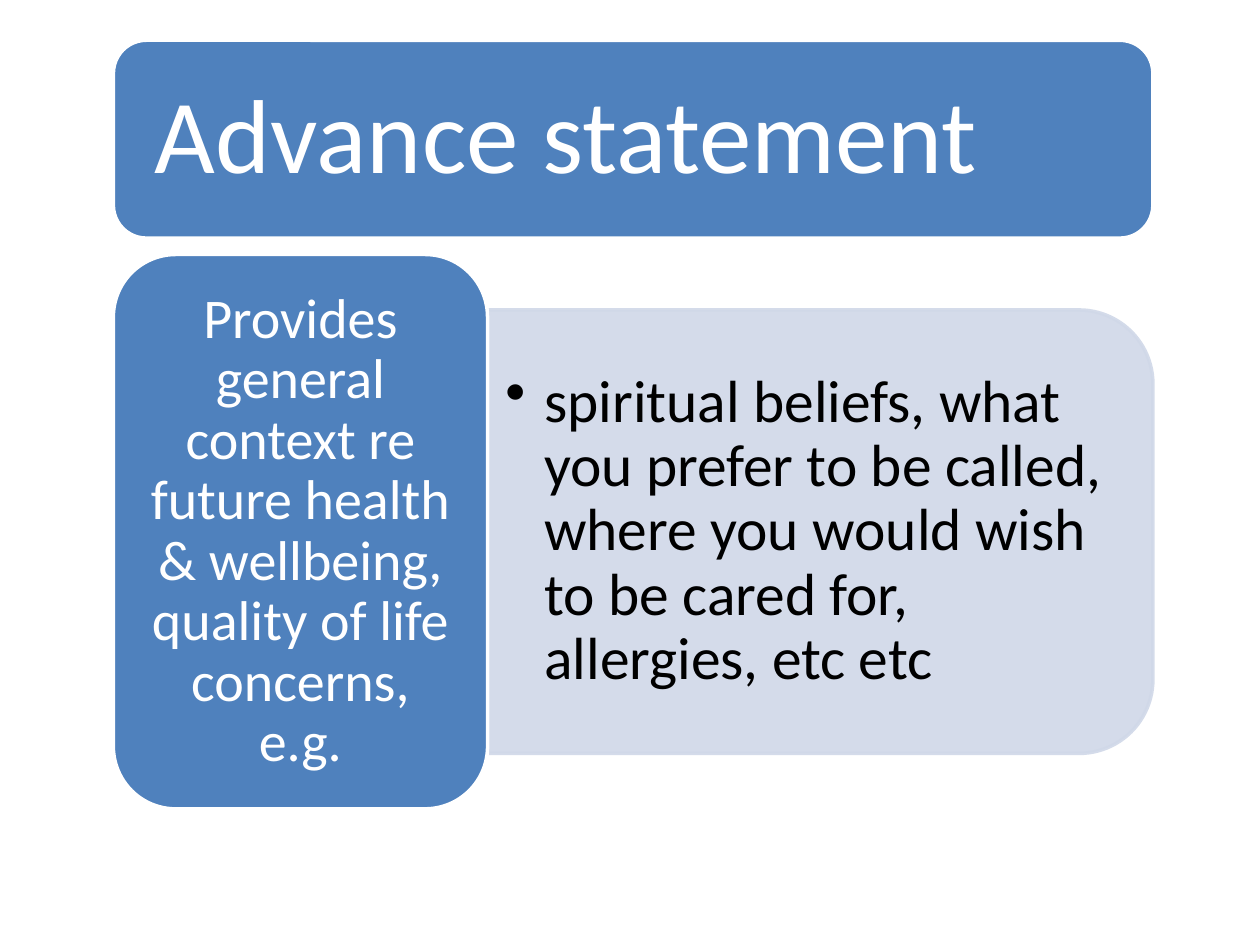
from lxml import etree
from pptx import Presentation
from pptx.dml.color import RGBColor
from pptx.enum.shapes import MSO_SHAPE
from pptx.enum.text import MSO_ANCHOR, MSO_AUTO_SIZE, PP_ALIGN
from pptx.oxml.ns import qn
from pptx.util import Inches, Pt

ROUND, ROUND_TOP = MSO_SHAPE.ROUNDED_RECTANGLE, MSO_SHAPE.ROUND_2_SAME_RECTANGLE
MIDDLE, NO_FIT = MSO_ANCHOR.MIDDLE, MSO_AUTO_SIZE.NONE
LEFT, CENTER = PP_ALIGN.LEFT, PP_ALIGN.CENTER
BLUE, PALE, WHITE, BLACK = "4F81BD", "D0D8E8", "FFFFFF", "000000"


def color(value):
    """Turn a hex string into a colour."""
    return RGBColor.from_string(value)


def place(sp, box):
    """Move a shape to a box given in inches."""
    sp.left, sp.top, sp.width, sp.height = map(Inches, box)


def inset(box, gap):
    """Shrink a box by the same gap on every side."""
    x, y, w, h = box
    return x + gap, y + gap, w - 2 * gap, h - 2 * gap


def add_panel(slide, kind, box, fill, line):
    """Add a filled, outlined panel."""
    sp = slide.shapes.add_shape(kind, *map(Inches, box))
    sp.shadow.inherit = False
    sp.fill.solid()
    sp.fill.fore_color.rgb = color(fill)
    sp.line.color.rgb = color(line)
    sp.line.width = Pt(2)
    return sp


def set_text(sp, text, size, ink, margins, align):
    """Write one paragraph, centred vertically, and return it."""
    tf = sp.text_frame
    tf.word_wrap = True
    tf.auto_size = NO_FIT
    tf.vertical_anchor = MIDDLE
    tf.margin_left = tf.margin_right = Inches(margins[0])
    tf.margin_top = tf.margin_bottom = Inches(margins[1])
    p = tf.paragraphs[0]
    p.text = text
    p.alignment = align
    p.line_spacing = 0.9
    p.font.size = Pt(size)
    p.font.name = "Calibri"
    p.font.color.rgb = color(ink)
    return p


def add_bullet(p, indent):
    """Give a paragraph a hanging round bullet."""
    ppr = p._p.get_or_add_pPr()
    ppr.set("marL", str(Inches(indent)))
    ppr.set("indent", str(-Inches(indent)))
    bullet = etree.Element(qn("a:buChar"), char="•")
    ppr.find(qn("a:lnSpc")).addnext(bullet)


def add_banner(slide, box, text):
    """Draw the heading banner with the slide title on it."""
    add_panel(slide, ROUND, box, BLUE, WHITE)
    title = slide.shapes.title
    place(title, inset(box, 0.08))
    slide.shapes._spTree.append(title._element)
    set_text(title, text, 60, WHITE, (0.25, 0.25), LEFT)


def add_details(slide, box, text):
    """Draw the pale panel, rounded on its right, with a bullet."""
    x, y, w, h = box
    upright = (x + (w - h) / 2, y + (h - w) / 2, h, w)
    sp = add_panel(slide, ROUND_TOP, upright, PALE, PALE)
    sp.rotation = 90
    for clr in sp._element.spPr.iter(qn("a:srgbClr")):
        etree.SubElement(clr, qn("a:alpha"), val="90000")
    label = slide.shapes.add_textbox(
        *map(Inches, (x, y + 0.17, w - 0.17, h - 0.34)))
    add_bullet(set_text(label, text, 34, BLACK, (0.14, 0.07), LEFT), 0.31)


def add_summary(slide, box, text):
    """Draw the blue summary card with centred text."""
    add_panel(slide, ROUND, box, BLUE, WHITE)
    label = slide.shapes.add_textbox(*map(Inches, inset(box, 0.145)))
    set_text(label, text, 32, WHITE, (0.13, 0.07), CENTER)


def main():
    """Build and save the slide."""
    prs = Presentation()
    prs.slide_width, prs.slide_height = Inches(10), Inches(7.5)
    s = prs.slides.add_slide(prs.slide_layouts[5])
    left, width, card_w = 0.9, 8.25, 2.97
    top, card_h = 2.02, 4.4
    panel_h = card_h * 0.8
    add_banner(s, (left, 0.32, width, 1.57), "Advance statement")
    add_details(
        s, (left + card_w, top + (card_h - panel_h) / 2,
            width - card_w, panel_h),
        "spiritual beliefs, what you prefer to be called, where you would "
        "wish to be cared for, allergies, etc etc")
    add_summary(
        s, (left, top, card_w, card_h),
        "Provides general context re future health & wellbeing, quality of "
        "life concerns, e.g.")
    prs.save("out.pptx")


if __name__ == "__main__":
    main()
